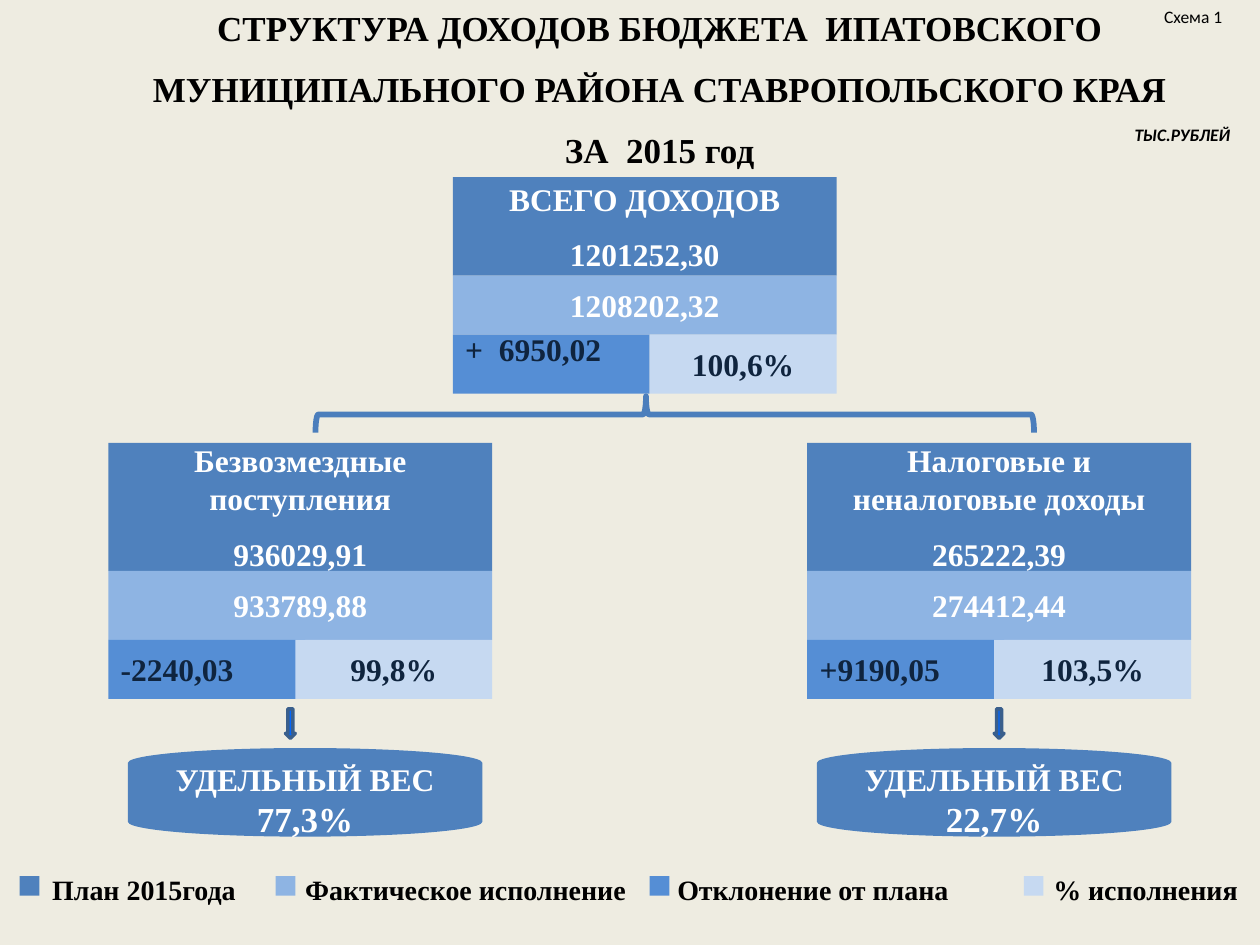
"""Budget revenue structure of a municipal district for 2015, as a one-slide scheme."""
from pptx import Presentation
from pptx.dml.color import RGBColor
from pptx.enum.shapes import MSO_SHAPE as Shape
from pptx.enum.text import MSO_ANCHOR as Anchor, PP_ALIGN as Align
from pptx.util import Inches, Pt

PAPER = RGBColor(0xEE, 0xEC, 0xE1)
PLAN = RGBColor(0x4F, 0x81, 0xBD)
ACTUAL = RGBColor(0x8E, 0xB4, 0xE3)
DEVIATION = RGBColor(0x55, 0x8E, 0xD5)
PERCENT = RGBColor(0xC6, 0xD9, 0xF1)
BRACE = RGBColor(0x4B, 0x7E, 0xBC)
ARROW = RGBColor(0x00, 0x66, 0xFF)
ARROW_EDGE = RGBColor(0x3A, 0x5F, 0x8C)
WHITE = RGBColor(0xFF, 0xFF, 0xFF)
NAVY = RGBColor(0x0F, 0x24, 0x3E)
BLACK = RGBColor(0, 0, 0)
SERIF = "Times New Roman"

prs = Presentation()
prs.slide_width, prs.slide_height = Inches(10), Inches(7.5)
CELL = prs.slide_width / 64
slide = prs.slides.add_slide(prs.slide_layouts[6])
slide.background.fill.solid()
slide.background.fill.fore_color.rgb = PAPER


def block(kind, col, row, cols, rows, fill=None, edge=None, weight=0):
    part = slide.shapes.add_shape(kind, *(round(n * CELL) for n in (col, row, cols, rows)))
    part.shadow.inherit = False
    for paint, color in ((part.fill, fill), (part.line.fill, edge)):
        if color is None:
            paint.background()
        else:
            paint.solid()
            paint.fore_color.rgb = color
    if edge is not None:
        part.line.width = Pt(weight)
    return part


def write(part, lines, color, align=Align.CENTER, size=18, face=SERIF, gap=0, bold=True):
    frame = part.text_frame
    frame.word_wrap = True
    frame.text = "\n".join(lines)
    for index, paragraph in enumerate(frame.paragraphs):
        paragraph.alignment = align
        if index and gap:
            paragraph.space_before = Pt(gap)
        for run in paragraph.runs:
            run.font.name, run.font.size, run.font.bold = face, Pt(size), bold
            run.font.color.rgb = color
    return frame


groups = [
    (23, 9, 5, 3, 9.5, "ВСЕГО ДОХОДОВ", "1201252,30", "1208202,32", "+  6950,02", "100,6%"),
    (41, 22.5, 6.5, 3.5, 10, "Налоговые и неналоговые доходы",
     "265222,39", "274412,44", "+9190,05", "103,5%"),
    (5.5, 22.5, 6.5, 3.5, 10, "Безвозмездные поступления",
     "936029,91", "933789,88", "-2240,03", "99,8%"),
]
for col, top, plan_rows, actual_rows, share_cols, name, plan, actual, deviation, percent in groups:
    actual_top = top + plan_rows
    result_top = actual_top + actual_rows
    write(block(Shape.RECTANGLE, col, top, 19.5, plan_rows, PLAN), [name, plan], WHITE, gap=10)
    write(block(Shape.RECTANGLE, col, actual_top, 19.5, actual_rows, ACTUAL), [actual], WHITE)
    difference = write(block(Shape.RECTANGLE, col, result_top, 10, 3, DEVIATION),
                       [deviation], NAVY, Align.LEFT)
    if name == "ВСЕГО ДОХОДОВ":
        difference.vertical_anchor = Anchor.TOP
        difference.margin_top = Inches(-0.04)
    write(block(Shape.RECTANGLE, col + 19.5 - share_cols, result_top, share_cols, 3, PERCENT),
          [percent], NAVY)

for disk_col, arrow_col, weight_share in ((6.5, 14.5, "77,3%"), (41.5, 50.5, "22,7%")):
    disk = block(Shape.FLOWCHART_MAGNETIC_DISK, disk_col, 38, 18, 4.5, PLAN)
    caption = write(disk, ["УДЕЛЬНЫЙ ВЕС", weight_share], WHITE)
    caption.paragraphs[1].runs[0].font.size = Pt(20)
    block(Shape.DOWN_ARROW, arrow_col, 36, 0.5, 1.5, ARROW, ARROW_EDGE, 2)

brace = block(Shape.RIGHT_BRACE, 33.35, 2.8, 1.85, 36.5, edge=BRACE, weight=3.25)
brace.rotation = 270
brace.adjustments[0], brace.adjustments[1] = 0.08, 0.46

legend = [
    (1, 2.65, PLAN, "План 2015года"),
    (14, 15.5, ACTUAL, "Фактическое исполнение"),
    (33, 34.4, DEVIATION, "Отклонение от плана"),
    (52, 53.5, PERCENT, "% исполнения"),
]
labels = [(col, 44, 17 if col < 50 else 10.5, 2.4, text, Align.LEFT, 16, SERIF, True)
          for _, col, _, text in legend]
labels += [
    (57, 6, 7, 1.7, "ТЫС.РУБЛЕЙ", Align.LEFT, 10, "Calibri", True),
    (4.5, 0, 58, 9.3, "СТРУКТУРА ДОХОДОВ БЮДЖЕТА  ИПАТОВСКОГО\n"
     "МУНИЦИПАЛЬНОГО РАЙОНА СТАВРОПОЛЬСКОГО КРАЯ\nЗА  2015 год", Align.CENTER, 20, SERIF, True),
    (58.5, 0, 5.5, 1.7, "Схема 1", Align.LEFT, 10, "Calibri", False),
]
for marker_col, _, color, _ in legend:
    block(Shape.RECTANGLE, marker_col, 44.5, 1, 1, color)
for col, row, cols, rows, text, align, size, face, bold in labels:
    label = slide.shapes.add_textbox(*(round(n * CELL) for n in (col, row, cols, rows)))
    frame = write(label, text.split("\n"), BLACK, align, size, face, 11, bold)
    if size == 16:
        frame.margin_left = frame.margin_right = 0
    if text == "ТЫС.РУБЛЕЙ":
        frame.paragraphs[0].runs[0].font.italic = True

prs.save("out.pptx")
